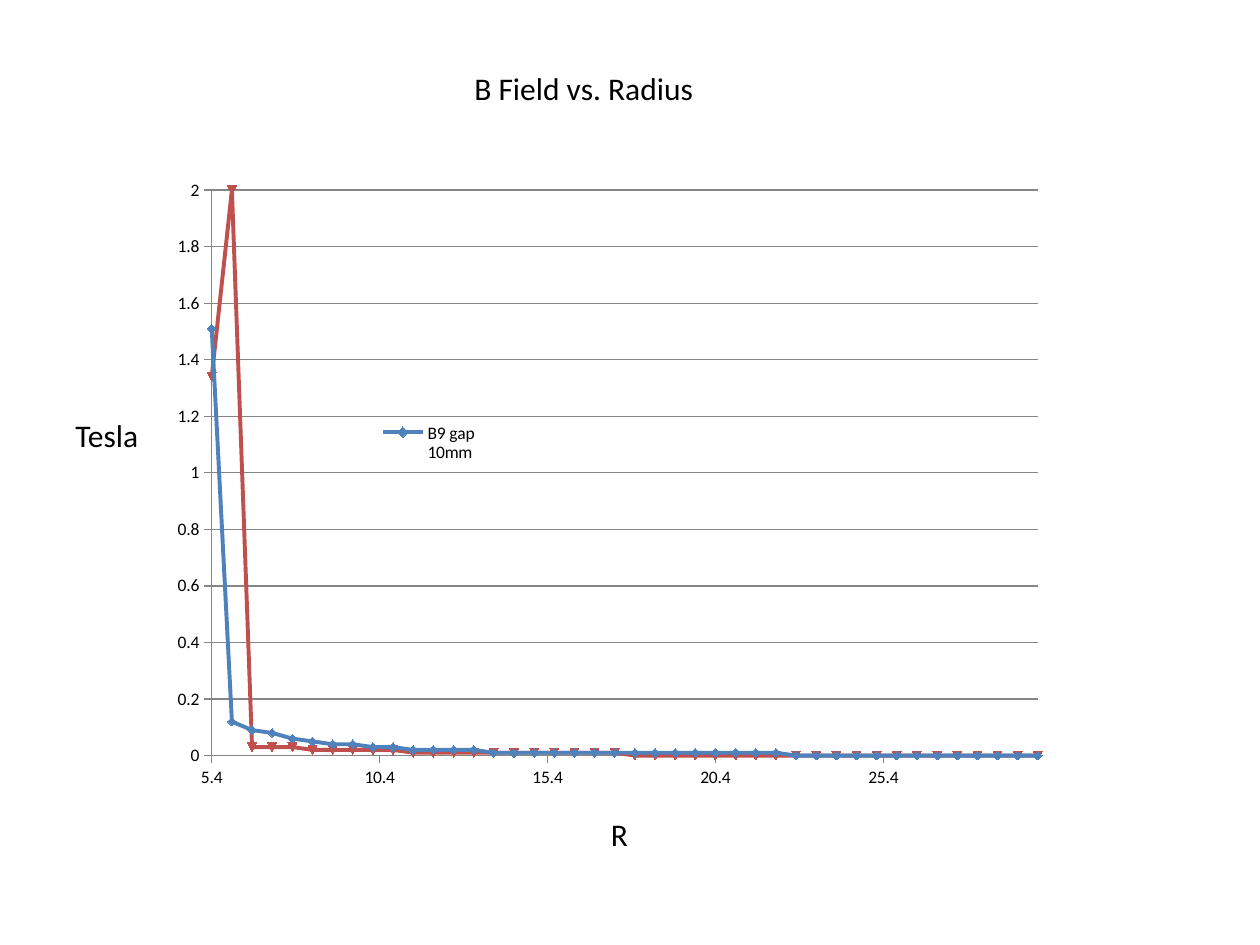
from lxml.etree import SubElement
from pptx import Presentation
from pptx.chart.data import XyChartData
from pptx.dml.color import RGBColor
from pptx.enum.chart import XL_CHART_TYPE as ChartType, XL_LEGEND_POSITION as LegendPosition
from pptx.enum.chart import XL_TICK_LABEL_POSITION as LabelPosition, XL_TICK_MARK as TickMark
from pptx.enum.text import MSO_AUTO_SIZE as AutoSize
from pptx.oxml.ns import qn
from pptx.util import Pt

BLACK = RGBColor(0x00, 0x00, 0x00)
GRAY = RGBColor(0x86, 0x86, 0x86)
BLUE = RGBColor(0x4F, 0x81, 0xBD)
RED = RGBColor(0xC0, 0x50, 0x4D)
FONT = "Calibri"

RADIUS_STEP = 0.6
FIELD_SERIES = [
    ("B9 gap 10mm", BLUE,
     [5.15, 5.17, 5.24, 5.35, 5.5, 2.56, 2.28, 1.54, 2.23, 1.51, 0.12, 0.09, 0.08, 0.06,
      0.05, 0.04, 0.04] + [0.03] * 2 + [0.02] * 4 + [0.01] * 15 + [0] * 13),
    ("B11 gap 10mm", RED,
     [5.25, 5.27, 5.34, 5.46, 5.6, 2.67, 2.16, 1.41, 2.07, 1.34, 2]
     + [0.03] * 3 + [0.02] * 5 + [0.01] * 11 + [0] * 21),
]


def set_font(font, size):
    font.name = FONT
    font.size = Pt(size)
    font.color.rgb = BLACK


def set_layout(parent, successors, box, inner=False):
    """Place a chart part by fractions of the chart's size."""
    for old in parent.findall(qn("c:layout")):
        parent.remove(old)
    layout = parent.makeelement(qn("c:layout"))
    following = next(child for child in parent if child.tag in map(qn, successors))
    following.addprevious(layout)
    manual = SubElement(layout, qn("c:manualLayout"))
    if inner:
        SubElement(manual, qn("c:layoutTarget"), val="inner")
    for mode in ("xMode", "yMode"):
        SubElement(manual, qn(f"c:{mode}"), val="edge")
    for name, value in zip("xywh", box):
        SubElement(manual, qn(f"c:{name}"), val=str(value))


def style_axis(axis, minimum, maximum, step, gridlines):
    axis.minimum_scale = minimum
    axis.maximum_scale = maximum
    axis.major_unit = step
    axis.major_tick_mark = TickMark.OUTSIDE
    axis.minor_tick_mark = TickMark.NONE
    axis.tick_label_position = LabelPosition.NEXT_TO_AXIS
    axis.tick_labels.number_format = "General"
    axis.tick_labels.number_format_is_linked = False
    axis.has_major_gridlines = gridlines
    lines = [axis.format.line]
    if gridlines:
        lines.append(axis.major_gridlines.format.line)
    for line in lines:
        line.color.rgb = GRAY
        line.width = Pt(0.75)


def add_legend(chart):
    """Show a legend inside the plot that lists the first series only."""
    chart.has_legend = True
    chart.legend.position = LegendPosition.RIGHT
    chart.legend.include_in_layout = False
    set_font(chart.legend.font, 10)
    element = chart.legend._element
    entry = element.makeelement(qn("c:legendEntry"))
    SubElement(entry, qn("c:idx"), val="1")
    SubElement(entry, qn("c:delete"), val="1")
    element.find(qn("c:legendPos")).addnext(entry)
    set_layout(element, ["c:overlay"], (0.21, 0.4, 0.11, 0.07))


def add_field_chart(slide, left, top, width, height):
    data = XyChartData()
    for name, _, fields in FIELD_SERIES:
        series = data.add_series(name)
        for index, field in enumerate(fields):
            series.add_data_point(round(index * RADIUS_STEP, 1), field)
    chart = slide.shapes.add_chart(
        ChartType.XY_SCATTER_SMOOTH, Pt(left), Pt(top), Pt(width), Pt(height), data).chart
    set_font(chart.font, 10)
    chart.has_title = False
    style_axis(chart.category_axis, 5.4, 30, 5, False)
    style_axis(chart.value_axis, 0, 2, 0.2, True)
    for series, (_, color, _) in zip(chart.plots[0].series, FIELD_SERIES):
        series.smooth = True
        series.format.line.color.rgb = color
        series.format.line.width = Pt(2.25)
        series.marker.size = 5
        for part in (series.marker.format.fill, series.marker.format.line.fill):
            part.solid()
            part.fore_color.rgb = color
    add_legend(chart)
    plot_area = chart._chartSpace.chart.plotArea
    set_layout(plot_area, ["c:scatterChart"], (0.053, 0.035, 0.807, 0.894), inner=True)


def add_label(slide, text, left, top, width, height):
    shape = slide.shapes.add_textbox(Pt(left), Pt(top), Pt(width), Pt(height))
    frame = shape.text_frame
    frame.word_wrap = False
    frame.auto_size = AutoSize.SHAPE_TO_FIT_TEXT
    run = frame.paragraphs[0].add_run()
    run.text = text
    set_font(run.font, 18)


def build_field_slide(presentation):
    slide = presentation.slides.add_slide(presentation.slide_layouts[6])
    add_field_chart(slide, 90, 96, 585, 361.5)
    add_label(slide, "B Field vs. Radius", 264, 36, 141, 29)
    add_label(slide, "R", 342, 462, 24.5, 29)
    add_label(slide, "Tesla", 36, 234, 51, 29)


def main():
    presentation = Presentation()
    presentation.slide_width = Pt(720)
    presentation.slide_height = Pt(540)
    build_field_slide(presentation)
    presentation.save("out.pptx")


if __name__ == "__main__":
    main()
